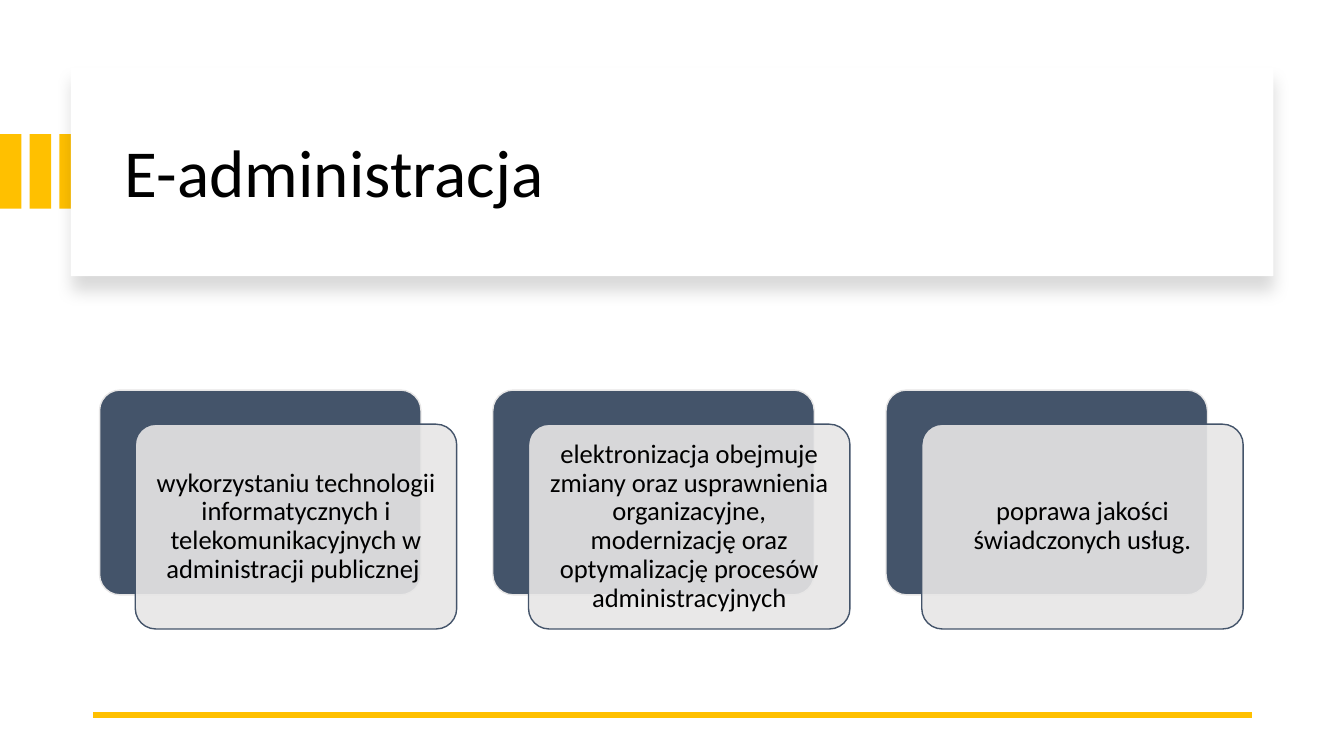
from lxml.etree import SubElement
from pptx import Presentation
from pptx.dml.color import RGBColor
from pptx.enum.shapes import MSO_CONNECTOR, MSO_SHAPE
from pptx.enum.text import MSO_ANCHOR, PP_ALIGN
from pptx.oxml.ns import qn
from pptx.util import Cm, Pt

# Content
TITLE = "E-administracja"
CARDS = [
    "wykorzystaniu technologii informatycznych i telekomunikacyjnych w administracji publicznej ",
    "elektronizacja obejmuje zmiany oraz usprawnienia organizacyjne, modernizację oraz "
    "optymalizację procesów administracyjnych",
    "poprawa jakości świadczonych usług.",
]

# Colours and font
WHITE = RGBColor(0xFF, 0xFF, 0xFF)
BLACK = RGBColor(0x00, 0x00, 0x00)
GOLD = RGBColor(0xFF, 0xC0, 0x00)
SLATE = RGBColor(0x44, 0x54, 0x6A)
GREY = RGBColor(0xE7, 0xE6, 0xE6)
FONT = "Calibri"

# Layout in centimetres
STRIPE_W, STRIPE_H, STRIPE_TOP, STRIPE_STEP = 0.54, 1.88, 3.38, 0.75
CARD_W, CARD_H, CARD_LEFT, CARD_TOP, CARD_STEP = 8.1, 5.16, 2.51, 9.83, 9.91
FRONT_DX, FRONT_DY = 0.9, 0.86

prs = Presentation()
prs.slide_width, prs.slide_height = Cm(33.87), Cm(19.05)
s = prs.slides.add_slide(prs.slide_layouts[6])


def add_box(kind, left, top, width, height, fill, line=None):
    sp = s.shapes.add_shape(kind, Cm(left), Cm(top), Cm(width), Cm(height))
    sp.shadow.inherit = False
    sp.fill.solid()
    sp.fill.fore_color.rgb = fill
    if line is None:
        sp.line.fill.background()
    else:
        sp.line.color.rgb = line
        sp.line.width = Pt(1)
    return sp


def add_card_box(left, top, fill, line):
    sp = add_box(MSO_SHAPE.ROUNDED_RECTANGLE, left, top, CARD_W, CARD_H, fill, line)
    sp.adjustments[0] = 0.1
    return sp


def write(sp, text, size, align, inset_x, inset_y):
    tf = sp.text_frame
    frame_format = {
        "word_wrap": True, "vertical_anchor": MSO_ANCHOR.MIDDLE,
        "margin_left": Cm(inset_x), "margin_right": Cm(inset_x),
        "margin_top": Cm(inset_y), "margin_bottom": Cm(inset_y),
    }
    for name, value in frame_format.items():
        setattr(tf, name, value)
    p = tf.paragraphs[0]
    p.alignment, p.line_spacing = align, 0.9
    r = p.add_run()
    r.text = text
    for name, value in {"name": FONT, "size": Pt(size)}.items():
        setattr(r.font, name, value)
    r.font.color.rgb = BLACK


# Stripes at the left edge
for i in range(3):
    add_box(MSO_SHAPE.RECTANGLE, i * STRIPE_STEP, STRIPE_TOP, STRIPE_W, STRIPE_H, GOLD)

# Title panel with a soft shadow below
panel = add_box(MSO_SHAPE.RECTANGLE, 1.79, 1.7, 30.3, 5.26, WHITE)
effects = panel._element.spPr.find(qn("a:effectLst"))
shadow = SubElement(effects, qn("a:outerShdw"), blurRad=str(Pt(11)), dist=str(Pt(10)),
                    dir="5400000", algn="t", rotWithShape="0")
shade = SubElement(shadow, qn("a:srgbClr"), val=str(BLACK))
SubElement(shade, qn("a:alpha"), val="15000")

title = s.shapes.add_textbox(Cm(2.9), Cm(2.26), Cm(28.27), Cm(4.32))
write(title, TITLE, 48, PP_ALIGN.LEFT, 0.25, 0.13)

# Rule at the bottom
rule = s.shapes.add_connector(MSO_CONNECTOR.STRAIGHT, Cm(31.55), Cm(18.01), Cm(2.34), Cm(18.01))
rule.line.color.rgb = GOLD
rule.line.width = Pt(4.5)
SubElement(rule._element.spPr, qn("a:effectLst"))

# Cards: a dark back and a translucent front that carries the text
for i, text in enumerate(CARDS):
    left = CARD_LEFT + i * CARD_STEP
    add_card_box(left, CARD_TOP, SLATE, GREY)
    front = add_card_box(left + FRONT_DX, CARD_TOP + FRONT_DY, GREY, SLATE)
    colour = front._element.spPr.find(qn("a:solidFill")).find(qn("a:srgbClr"))
    SubElement(colour, qn("a:alpha"), val="90000")
    write(front, text, 19, PP_ALIGN.CENTER, 0.2, 0.2)

prs.save("out.pptx")
